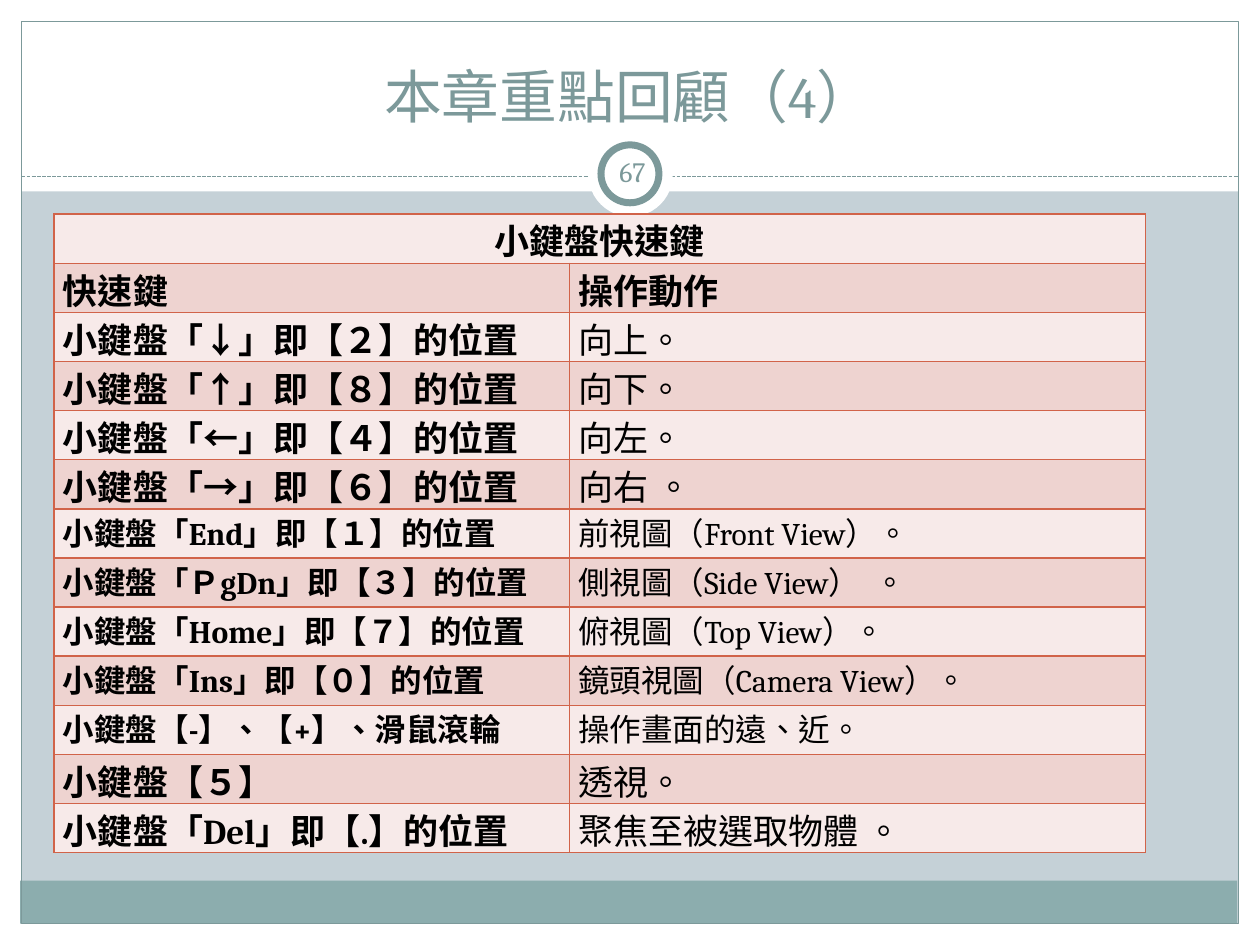
"""Build the numeric keypad shortcut review slide."""
from typing import NamedTuple, Optional

from lxml.etree import SubElement
from pptx import Presentation
from pptx.dml.color import RGBColor
from pptx.enum.dml import MSO_LINE
from pptx.enum.lang import MSO_LANGUAGE_ID
from pptx.enum.shapes import MSO_CONNECTOR, MSO_SHAPE
from pptx.enum.text import MSO_ANCHOR, PP_ALIGN
from pptx.oxml.ns import qn
from pptx.util import Inches, Pt

COLORS = {
    "backdrop": "C5D1D7", "white": "FFFFFF", "band": "8CADAE", "accent": "7C999A",
    "light": "F7EAE9", "dark": "EED3D0", "border": "D16349", "text": "000000",
}


class Panel(NamedTuple):
    left: float
    top: float
    width: float
    height: float
    fill: Optional[str] = "white"
    line_width: float = 0
    preset: MSO_SHAPE = MSO_SHAPE.RECTANGLE


class Shortcut(NamedTuple):
    key: str
    action: str
    size: int = 20
    action_bold: bool = False


FRAME = [
    Panel(0, 7.33, 10, 0.17),
    Panel(0, 0, 10, 1.52),
    Panel(0, 0, 0.17, 7.5),
    Panel(9.83, 0, 0.17, 7.5),
    Panel(0.16, 6.99, 9.66, 0.34, "band"),
    Panel(0.17, 0.17, 9.66, 7.16, None, 0.75),
]
BADGE = [
    Panel(4.67, 1.05, 0.67, 0.67, preset=MSO_SHAPE.OVAL),
    Panel(4.77, 1.15, 0.46, 0.46, line_width=4, preset=MSO_SHAPE.OVAL),
]
SHORTCUTS = [
    Shortcut("快速鍵", "操作動作", action_bold=True),
    Shortcut("小鍵盤「↓」即【２】的位置", "向上。"),
    Shortcut("小鍵盤「↑」即【８】的位置", "向下。"),
    Shortcut("小鍵盤「←」即【４】的位置", "向左。"),
    Shortcut("小鍵盤「→」即【６】的位置", "向右 。"),
    Shortcut("小鍵盤「End」即【１】的位置", "前視圖（Front View）。", 18),
    Shortcut("小鍵盤「ＰgDn」即【３】的位置", "側視圖（Side View）  。", 18),
    Shortcut("小鍵盤「Home」即【７】的位置", "俯視圖（Top View）。", 18),
    Shortcut("小鍵盤「Ins」即【０】的位置", "鏡頭視圖（Camera View）。", 18),
    Shortcut("小鍵盤【-】、【+】、滑鼠滾輪", "操作畫面的遠、近。", 18),
    Shortcut("小鍵盤【５】", "透視。"),
    Shortcut("小鍵盤「Del」即【.】的位置", "聚焦至被選取物體 。"),
]


def rgb(name: str) -> RGBColor:
    """Look up a named colour."""
    return RGBColor.from_string(COLORS[name])


def write(frame, text: str, size: float, color: str, bold: bool = False,
          align: PP_ALIGN = PP_ALIGN.LEFT, font: str = "Cambria") -> None:
    """Add one formatted run to the first paragraph of a text frame."""
    paragraph = frame.paragraphs[0]
    paragraph.alignment = align
    run = paragraph.add_run()
    run.text = text
    run.font.size = Pt(size)
    run.font.name = font
    run.font.bold = bold
    run.font.color.rgb = rgb(color)
    run.font.language_id = MSO_LANGUAGE_ID.TRADITIONAL_CHINESE


def draw_panel(slide, panel: Panel) -> None:
    """Draw one part of the slide's frame or badge."""
    shape = slide.shapes.add_shape(
        panel.preset, Inches(panel.left), Inches(panel.top),
        Inches(panel.width), Inches(panel.height))
    shape.shadow.inherit = False
    if panel.fill:
        shape.fill.solid()
        shape.fill.fore_color.rgb = rgb(panel.fill)
    else:
        shape.fill.background()
    if panel.line_width:
        shape.line.color.rgb = rgb("accent")
        shape.line.width = Pt(panel.line_width)
    else:
        shape.line.fill.background()


def draw_divider(slide) -> None:
    """Draw the dashed rule under the title."""
    divider = slide.shapes.add_connector(
        MSO_CONNECTOR.STRAIGHT, Inches(0.17), Inches(1.4), Inches(9.83), Inches(1.4))
    divider.line.color.rgb = rgb("accent")
    divider.line.width = Pt(0.75)
    divider.line.dash_style = MSO_LINE.SQUARE_DOT
    SubElement(divider.element.spPr, qn("a:effectLst"))


def style_cell(cell, fill: str) -> None:
    """Set a cell's margins, borders and fill."""
    cell.margin_left = cell.margin_right = Inches(0.07)
    cell.margin_top = cell.margin_bottom = 0
    properties = cell._tc.get_or_add_tcPr()
    for side in ("lnL", "lnR", "lnT", "lnB"):
        border = SubElement(properties, qn(f"a:{side}"), w=str(Pt(1)))
        solid = SubElement(border, qn("a:solidFill"))
        SubElement(solid, qn("a:srgbClr"), val=COLORS["border"])
    cell.fill.solid()
    cell.fill.fore_color.rgb = rgb(fill)


def draw_shortcuts(slide) -> None:
    """Draw the banded shortcut table with its merged heading."""
    rows = len(SHORTCUTS) + 1
    table = slide.shapes.add_table(
        rows, 2, Inches(0.43), Inches(1.7), Inches(8.66), Inches(0.39 * rows)).table
    for column, width in zip(table.columns, (4.09, 4.57)):
        column.width = Inches(width)
    for index, row in enumerate(table.rows):
        row.height = Inches(0.39)
        for cell in row.cells:
            style_cell(cell, "dark" if index % 2 else "light")
    heading = table.cell(0, 0)
    heading.merge(table.cell(0, 1))
    write(heading.text_frame, "小鍵盤快速鍵", 20, "text", True, PP_ALIGN.CENTER, "Calibri")
    for index, shortcut in enumerate(SHORTCUTS, 1):
        write(table.cell(index, 0).text_frame, shortcut.key, shortcut.size, "text", True)
        write(table.cell(index, 1).text_frame, shortcut.action, shortcut.size, "text",
              shortcut.action_bold)


def draw_title(slide) -> None:
    """Place the title above the frame panels."""
    title = slide.shapes.title
    title.left, title.top = Inches(0.33), Inches(0.25)
    title.width, title.height = Inches(9.33), Inches(0.83)
    title.text_frame.vertical_anchor = MSO_ANCHOR.BOTTOM
    write(title.text_frame, "本章重點回顧（4）", 33, "accent", align=PP_ALIGN.CENTER)
    title.element.getparent().append(title.element)


def draw_page_number(slide) -> None:
    """Write the page number inside the badge."""
    frame = slide.shapes.add_textbox(
        Inches(4.77), Inches(1.12), Inches(0.5), Inches(0.48)).text_frame
    frame.word_wrap = True
    frame.vertical_anchor = MSO_ANCHOR.MIDDLE
    frame.margin_left = frame.margin_right = Inches(0.05)
    frame.margin_top = frame.margin_bottom = Inches(0.05)
    write(frame, "67", 16, "accent", align=PP_ALIGN.CENTER)


def main() -> None:
    """Build and save the presentation."""
    presentation = Presentation()
    presentation.slide_width, presentation.slide_height = Inches(10), Inches(7.5)
    slide = presentation.slides.add_slide(presentation.slide_layouts[5])
    slide.background.fill.solid()
    slide.background.fill.fore_color.rgb = rgb("backdrop")
    for panel in FRAME:
        draw_panel(slide, panel)
    draw_divider(slide)
    for panel in BADGE:
        draw_panel(slide, panel)
    draw_title(slide)
    draw_page_number(slide)
    draw_shortcuts(slide)
    presentation.save("out.pptx")


if __name__ == "__main__":
    main()
